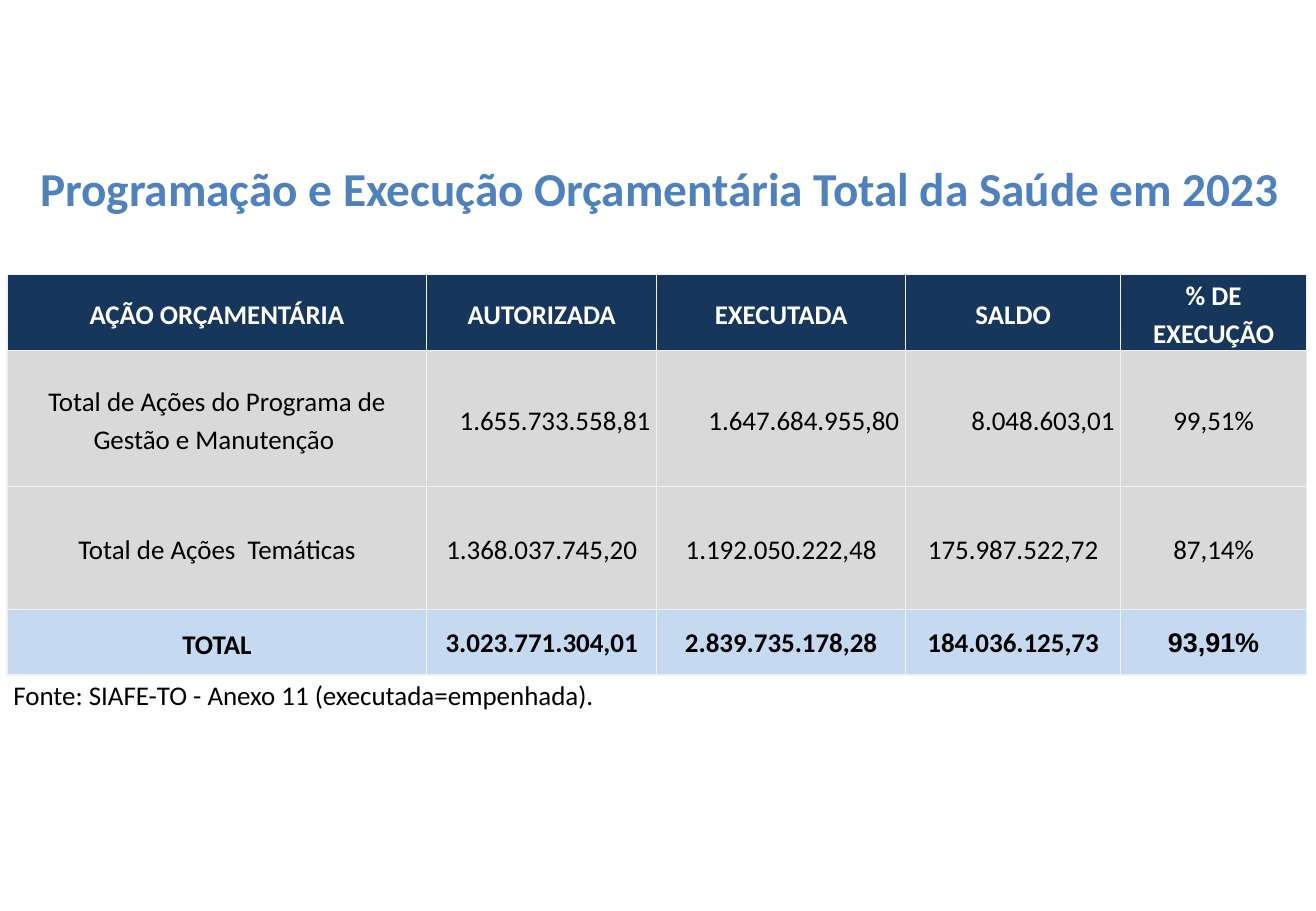
from pptx import Presentation
from pptx.dml.color import RGBColor
from pptx.enum.text import MSO_ANCHOR, PP_ALIGN
from pptx.oxml.ns import qn
from pptx.util import Cm, Pt
from lxml.etree import SubElement

TITLE = "Programação e Execução Orçamentária Total da Saúde em 2023"
ROWS = [
    ("AÇÃO ORÇAMENTÁRIA", "AUTORIZADA", "EXECUTADA", "SALDO", "% DE EXECUÇÃO"),
    ("Total de Ações do Programa de Gestão e Manutenção ",
     "1.655.733.558,81", "1.647.684.955,80", "8.048.603,01", "99,51%"),
    ("Total de Ações  Temáticas",
     "1.368.037.745,20", "1.192.050.222,48", "175.987.522,72", "87,14%"),
    ("TOTAL", "3.023.771.304,01", "2.839.735.178,28", "184.036.125,73", "93,91%"),
    ("Fonte: SIAFE-TO - Anexo 11 (executada=empenhada).", "", "", "", ""),
]
WIDTHS = [8.77, 4.81, 5.2, 4.5, 3.88]
HEIGHTS = [1.1, 2.85, 2.57, 1.37, 1.1]
HEAD, FIRST, TOTAL, SOURCE = 0, 1, 3, 4

BLUE = RGBColor(0x4F, 0x81, 0xBD)
NAVY = RGBColor(0x16, 0x36, 0x5C)
GREY = RGBColor(0xD9, 0xD9, 0xD9)
PALE = RGBColor(0xC5, 0xD9, 0xF1)
EDGE = RGBColor(0xF2, 0xF2, 0xF2)
WHITE = RGBColor(0xFF, 0xFF, 0xFF)
BLACK = RGBColor(0, 0, 0)
FILLS = [NAVY, GREY, GREY, PALE, None]


def style(par, size, color, bold, name="Calibri"):
    for run in par.runs:
        font = run.font
        font.size, font.bold, font.name = Pt(size), bold, name
        font.color.rgb = color


def border(cell, sides):
    """Draw the named sides of a cell and hide the others."""
    props = cell._tc.get_or_add_tcPr()
    for pos, side in enumerate("LRTB"):
        line = props.makeelement(qn("a:ln" + side), {"w": str(Pt(1))})
        props.insert(pos, line)
        if side in sides:
            fill = SubElement(line, qn("a:solidFill"))
            SubElement(fill, qn("a:srgbClr"), val=str(EDGE))
        else:
            SubElement(line, qn("a:noFill"))


def align(row, col):
    if row == SOURCE:
        return PP_ALIGN.LEFT
    if row == FIRST and 1 <= col <= 3:
        return PP_ALIGN.RIGHT
    return PP_ALIGN.CENTER


def fill_cell(cell, row, col):
    cell.text_frame.text = ROWS[row][col]
    par = cell.text_frame.paragraphs[0]
    par.alignment = align(row, col)
    total = row == TOTAL and col > 0
    if not total:
        par.line_spacing = 1.15
    side = Cm(0.03 if total else 0.13)
    cell.margin_left = cell.margin_right = side
    cell.margin_top = Cm(0.03 if total else 0)
    cell.margin_bottom = 0
    cell.vertical_anchor = MSO_ANCHOR.TOP if row == SOURCE else MSO_ANCHOR.MIDDLE
    style(par, 16, WHITE if row == HEAD else BLACK, row in (HEAD, TOTAL),
          "Arial" if total and col == 4 else "Calibri")
    if FILLS[row] is None:
        cell.fill.background()
    else:
        cell.fill.solid()
        cell.fill.fore_color.rgb = FILLS[row]
    border(cell, "T" if row == SOURCE else "LRTB")


deck = Presentation()
deck.slide_width, deck.slide_height = Cm(27.51), Cm(19.05)
slide = deck.slides.add_slide(deck.slide_layouts[6])

table = slide.shapes.add_table(
    len(ROWS), len(WIDTHS), Cm(0.15), Cm(5.74),
    Cm(sum(WIDTHS)), Cm(sum(HEIGHTS))).table
table.first_row = table.horz_banding = False
for col, width in enumerate(WIDTHS):
    table.columns[col].width = Cm(width)
for row, height in enumerate(HEIGHTS):
    table.rows[row].height = Cm(height)
    for col in range(len(WIDTHS)):
        fill_cell(table.cell(row, col), row, col)
table.cell(SOURCE, 0).merge(table.cell(SOURCE, len(WIDTHS) - 1))

box = slide.shapes.add_textbox(0, Cm(3.2), Cm(27.56), Cm(1.45))
box.text_frame.word_wrap = True
box.text_frame.text = TITLE
title = box.text_frame.paragraphs[0]
title.alignment = PP_ALIGN.CENTER
style(title, 28, BLUE, True)

deck.save("out.pptx")
